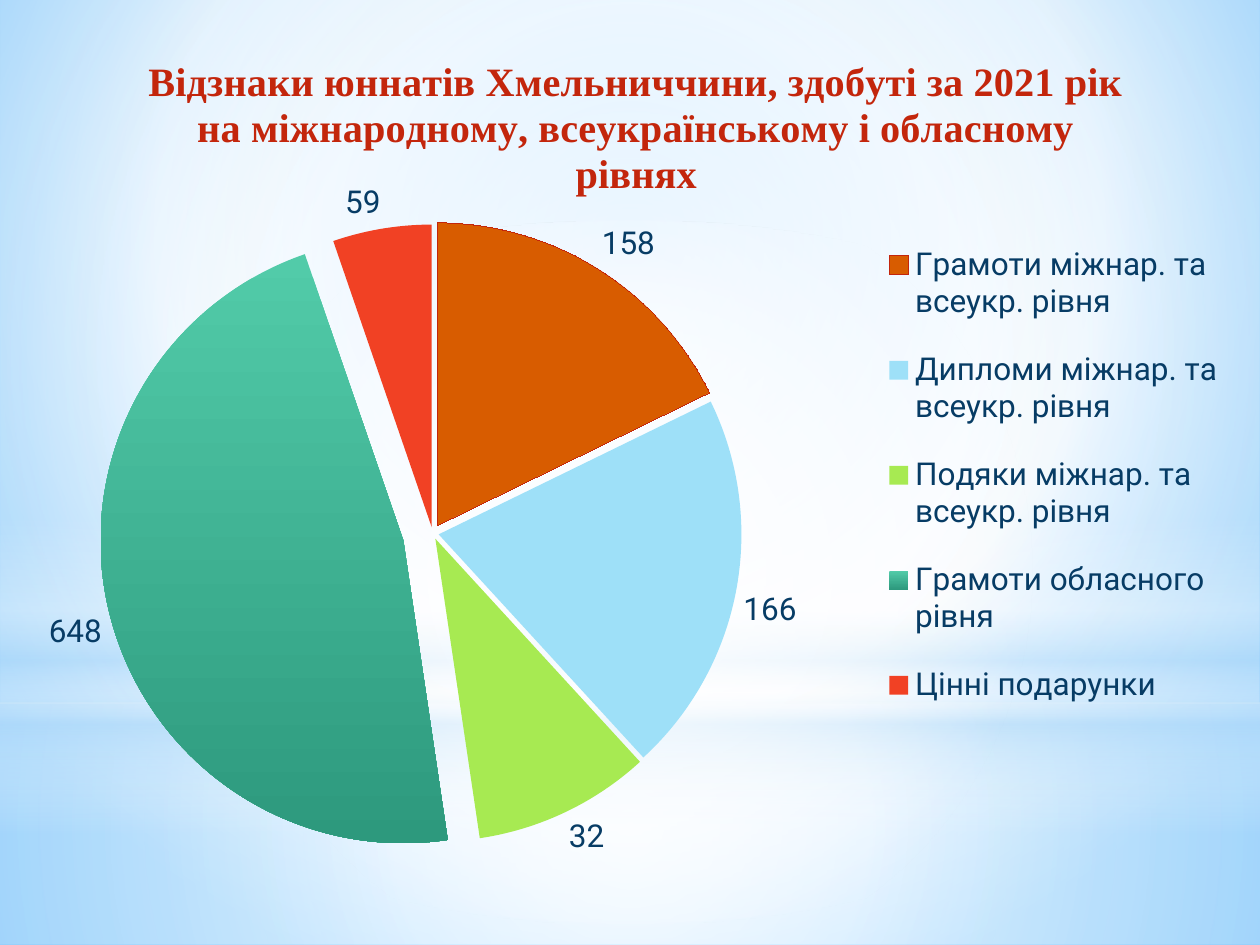
import pptx
import pptx.chart.data
import pptx.dml.color
import pptx.enum.chart
import pptx.enum.shapes
import pptx.oxml
import pptx.oxml.ns
import pptx.util
from pptx.util import Inches

RGBColor = pptx.dml.color.RGBColor
WHITE = RGBColor(0xFF, 0xFF, 0xFF)
SKY = RGBColor(0x9E, 0xD5, 0xFF)
BLUE = RGBColor(0x5B, 0xB9, 0xFF)
PALE = RGBColor(0xB4, 0xDC, 0xFA)
NAVY = RGBColor(0x07, 0x3C, 0x65)
TITLE_RED = RGBColor(0xC3, 0x26, 0x0C)
ORANGE = RGBColor(0xD8, 0x5C, 0x00)
ICE = RGBColor(0x9E, 0xE0, 0xF8)
LIME = RGBColor(0xA7, 0xEA, 0x52)
MINT = RGBColor(0x52, 0xCB, 0xA9)
GREEN = RGBColor(0x2D, 0x99, 0x7D)
RED = RGBColor(0xF1, 0x41, 0x24)

CENTER = (50, 50, 50, 50)


def set_gradient(fill, parent, stops, focus=None):
    fill.gradient()
    old = parent.find(pptx.oxml.ns.qn("a:gradFill"))
    marks = "".join(
        f'<a:gs pos="{place * 1000}"><a:srgbClr val="{color}">'
        f'<a:alpha val="{alpha * 1000}"/></a:srgbClr></a:gs>'
        for place, color, alpha in stops
    )
    if focus:
        sides = " ".join(f'{side}="{value * 1000}"' for side, value in zip("ltrb", focus))
        shade = f'<a:path path="circle"><a:fillToRect {sides}/></a:path>'
    else:
        shade = '<a:lin ang="5400000" scaled="0"/>'
    namespace = pptx.oxml.ns.nsdecls("a")
    new = pptx.oxml.parse_xml(
        f'<a:gradFill {namespace} rotWithShape="1"><a:gsLst>{marks}</a:gsLst>{shade}</a:gradFill>'
    )
    parent.replace(old, new)


def place_part(element, position, target="", **values):
    for old in element.findall(pptx.oxml.ns.qn("c:layout")):
        element.remove(old)
    sizes = "".join(f'<c:{name} val="{value}"/>' for name, value in values.items())
    element.insert(position, pptx.oxml.parse_xml(
        f'<c:layout {pptx.oxml.ns.nsdecls("c")}><c:manualLayout>{target}'
        f'<c:xMode val="edge"/><c:yMode val="edge"/>{sizes}</c:manualLayout></c:layout>'
    ))


deck = pptx.Presentation()
deck.slide_width = Inches(10)
deck.slide_height = Inches(7.5)
page = deck.slides.add_slide(deck.slide_layouts[6])

page_fill = page.background.fill
page_fill.solid()
set_gradient(
    page_fill,
    page.background._cSld.bg.bgPr,
    [(0, SKY, 100), (60, WHITE, 100), (100, BLUE, 100)],
    (20, 10, 20, 60),
)

RECTANGLE = pptx.enum.shapes.MSO_SHAPE.RECTANGLE
OVAL = pptx.enum.shapes.MSO_SHAPE.OVAL
backdrop = [
    (RECTANGLE, 5.58, 1.92, [(0, WHITE, 91), (37, WHITE, 76), (100, PALE, 79)], CENTER),
    (RECTANGLE, 0, 5.58, [(0, WHITE, 89), (48, WHITE, 62), (100, PALE, 79)], CENTER),
    (RECTANGLE, 4.12, 2.5, [(0, WHITE, 0), (29, WHITE, 30), (45, PALE, 40),
                            (55, WHITE, 26), (65, PALE, 60), (100, WHITE, 0)], None),
    (OVAL, 1.75, 5.58, [(0, WHITE, 100), (56, WHITE, 0)], CENTER),
]
for kind, top, height, stops, focus in backdrop:
    shape = page.shapes.add_shape(kind, 0, Inches(top), Inches(10), Inches(height))
    shape.shadow.inherit = False
    shape.line.fill.background()
    set_gradient(shape.fill, shape._element.spPr, stops, focus)

awards = [
    ("Грамоти міжнар. та всеукр. рівня", 182, "158", ORANGE, 3),
    ("Дипломи міжнар. та всеукр. рівня", 209, "166", ICE, 2),
    ("Подяки міжнар. та всеукр. рівня ", 97, "32", LIME, 2),
    ("Грамоти обласного рівня ", 482, "648", MINT, 10),
    ("Цінні подарунки", 54, "59", RED, 2),
]
data = pptx.chart.data.CategoryChartData()
data.categories = [award[0] for award in awards]
data.add_series("Series 1", [award[1] for award in awards])
chart = page.shapes.add_chart(
    pptx.enum.chart.XL_CHART_TYPE.PIE, 0, 0, Inches(10), Inches(7.5), data
).chart
chart.font.name = "Roboto"
chart.font.size = pptx.util.Pt(18)
chart.font.color.rgb = NAVY

chart.has_title = True
para = chart.chart_title.text_frame.paragraphs[0]
para.text = "Відзнаки юннатів Хмельниччини, здобуті за 2021 рік на міжнародному, всеукраїнському і обласному рівнях"
para.font.name = "Times New Roman"
para.font.size = pptx.util.Pt(23)
para.font.bold = True
para.font.color.rgb = TITLE_RED
place_part(chart.chart_title._element, 1, x=0.112, y=0.051)

chart.has_legend = True
chart.legend.position = pptx.enum.chart.XL_LEGEND_POSITION.RIGHT
chart.legend.include_in_layout = False
chart.legend.font.size = pptx.util.Pt(18)
chart.legend.font.color.rgb = NAVY
place_part(chart.legend._element, 1, x=0.696, y=0.228, w=0.28, h=0.55)
place_part(chart._chartSpace.chart.plotArea, 0, '<c:layoutTarget val="inner"/>',
           x=0.043, y=0.164, w=0.601, h=0.801)

plot = chart.plots[0]
plot.vary_by_categories = True
series = plot.series[0]
explosion = pptx.oxml.parse_xml(f'<c:explosion {pptx.oxml.ns.nsdecls("c")} val="25"/>')
series._element.find(pptx.oxml.ns.qn("c:tx")).addnext(explosion)
labels = series.data_labels
labels.show_value = True
labels.position = pptx.enum.chart.XL_LABEL_POSITION.OUTSIDE_END
labels.font.size = pptx.util.Pt(18)
labels.font.color.rgb = NAVY
for index, (name, value, caption, color, offset) in enumerate(awards):
    point = series.points[index]
    point.format.fill.solid()
    point.format.fill.fore_color.rgb = color
    slice_format = series._element.findall(pptx.oxml.ns.qn("c:dPt"))[index].find(pptx.oxml.ns.qn("c:spPr"))
    slice_format.addprevious(
        pptx.oxml.parse_xml(f'<c:explosion {pptx.oxml.ns.nsdecls("c")} val="{offset}"/>')
    )
    if color == MINT:
        set_gradient(point.format.fill, slice_format, [(0, MINT, 100), (100, GREEN, 100)])
    if color == ORANGE:
        point.format.line.color.rgb = TITLE_RED
    else:
        point.format.line.fill.background()
    label = point.data_label
    para = label.text_frame.paragraphs[0]
    para.text = caption
    para.font.name = "Roboto"
    para.font.size = pptx.util.Pt(18)
    para.font.color.rgb = NAVY
    label.position = pptx.enum.chart.XL_LABEL_POSITION.OUTSIDE_END

deck.save("out.pptx")
